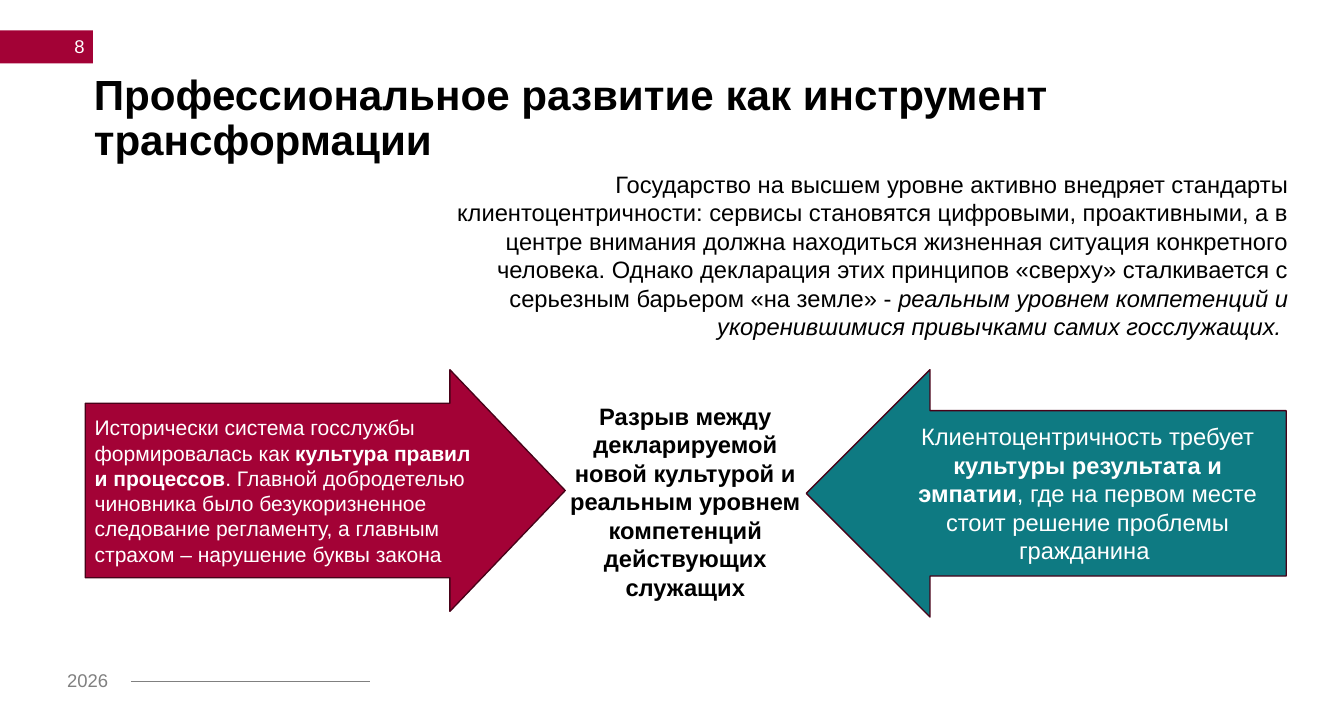
from dataclasses import dataclass

from lxml import etree
from pptx import Presentation
from pptx import util as u
from pptx.dml.color import RGBColor
from pptx.enum import shapes, text
from pptx.oxml.ns import qn


@dataclass(frozen=True)
class Theme:
    font: str = "Arial"
    crimson: str = "A30236"
    teal: str = "0E7A82"
    outline: str = "470118"
    ink: str = "000000"
    paper: str = "FFFFFF"
    muted: str = "808080"
    title: int = 32
    body: int = 18
    compact: int = 16
    small: int = 14


THEME = Theme()
WIDTH, HEIGHT = u.Inches(14.17), u.Inches(7.48)
LEFT, CENTER, RIGHT = text.PP_ALIGN.LEFT, text.PP_ALIGN.CENTER, text.PP_ALIGN.RIGHT
ARROW_TOP, ARROW_WIDTH = 52.14, 35.71


def col(n):
    """Length of n columns, each 1% of the slide's width."""
    return round(WIDTH * n / 100)


def row(n):
    """Length of n rows, each 1% of the slide's height."""
    return round(HEIGHT * n / 100)


def grid_box(left, top, width, height):
    return col(left), row(top), col(width), row(height)


def write(sp, runs, size, color, align=LEFT, bold=None, middle=False):
    """Fill a shape with one paragraph; runs are (wording, emphasis) pairs."""
    tf = sp.text_frame
    tf.word_wrap = True
    tf.vertical_anchor = text.MSO_ANCHOR.MIDDLE if middle else text.MSO_ANCHOR.TOP
    p = tf.paragraphs[0]
    p.alignment = align
    p.font.name = THEME.font
    p.font.size = u.Pt(size)
    p.font.color.rgb = RGBColor.from_string(color)
    p.font.bold = bold
    for wording, emphasis in runs:
        r = p.add_run()
        r.text = wording
        if emphasis:
            setattr(r.font, emphasis, True)
    return tf


def add_text(s, box, runs, size, color=THEME.ink, **style):
    return write(s.shapes.add_textbox(*grid_box(*box)), runs, size, color, **style)


def add_block(s, kind, box, fill):
    sp = s.shapes.add_shape(kind, *grid_box(*box))
    sp.shadow.inherit = False
    sp.fill.solid()
    sp.fill.fore_color.rgb = RGBColor.from_string(fill)
    sp.line.fill.background()
    return sp


def add_arrow(s, kind, box, fill, adjustments, runs, size, align):
    sp = add_block(s, kind, box, fill)
    sp.line.color.rgb = RGBColor.from_string(THEME.outline)
    sp.line.width = u.Pt(1)
    for i, value in enumerate(adjustments):
        sp.adjustments[i] = value
    write(sp, runs, size, THEME.paper, align=align, middle=True)


def add_rule(s, start, end, y):
    line = s.shapes.add_connector(
        shapes.MSO_CONNECTOR.STRAIGHT, col(start), row(y), col(end), row(y))
    line.line.color.rgb = RGBColor.from_string(THEME.muted)
    line.line.width = u.Pt(1.5)
    etree.SubElement(line._element.spPr, qn("a:effectLst"))


def add_frame(s):
    """Page number tab and dated footer."""
    add_block(s, shapes.MSO_SHAPE.RECTANGLE, (0, 4.28, 6.92, 4.68), THEME.crimson)
    add_text(s, (1.27, 3.88, 5.72, 5.35), [("8", None)], THEME.small,
             THEME.paper, align=RIGHT, middle=True)
    add_text(s, (4.3, 93.72, 4.73, 4.55), [("2026", None)], THEME.small, THEME.muted)
    add_rule(s, 9.74, 27.52, 96.12)


def add_title(s, wording):
    tf = add_text(s, (6.99, 10.43, 74.31, 12.83), [(wording, None)],
                  THEME.title, bold=True)
    tf.margin_left = tf.margin_top = tf.margin_right = tf.margin_bottom = 0
    tf.paragraphs[0].line_spacing = 0.9


def main():
    prs = Presentation()
    prs.slide_width, prs.slide_height = WIDTH, HEIGHT
    s = prs.slides.add_slide(prs.slide_layouts[6])

    add_frame(s)
    add_title(s, "Профессиональное развитие как инструмент трансформации")
    add_text(s, (28.51, 23.26, 68.03, 25.67), [
        ("Государство на высшем уровне активно внедряет стандарты "
         "клиентоцентричности: сервисы становятся цифровыми, проактивными, "
         "а в центре внимания должна находиться жизненная ситуация конкретного "
         "человека. Однако декларация этих принципов «сверху» сталкивается "
         "с серьезным барьером «на земле» - ", None),
        ("реальным уровнем компетенций и укоренившимися привычками "
         "самих госслужащих. ", "italic"),
    ], THEME.body, align=RIGHT)

    add_arrow(s, shapes.MSO_SHAPE.RIGHT_ARROW, (6.35, ARROW_TOP, ARROW_WIDTH, 34.09),
              THEME.crimson, (0.722, 0.477), [
        ("Исторически система госслужбы формировалась как ", None),
        ("культура правил и процессов", "bold"),
        (". Главной добродетелью чиновника было безукоризненное следование "
         "регламенту, а главным страхом – нарушение буквы закона", None),
    ], THEME.compact, LEFT)
    add_arrow(s, shapes.MSO_SHAPE.LEFT_ARROW, (59.99, ARROW_TOP, ARROW_WIDTH, 34.89),
              THEME.teal, (0.669, 0.5), [
        ("Клиентоцентричность требует ", None),
        ("культуры результата и эмпатии", "bold"),
        (", где на первом месте стоит решение проблемы гражданина ", None),
    ], THEME.body, CENTER)
    add_text(s, (41.64, 56.02, 18.7, 29.68), [
        ("Разрыв между декларируемой новой культурой и реальным уровнем "
         "компетенций действующих служащих", None),
    ], THEME.body, align=CENTER, bold=True)

    prs.save("out.pptx")


if __name__ == "__main__":
    main()
